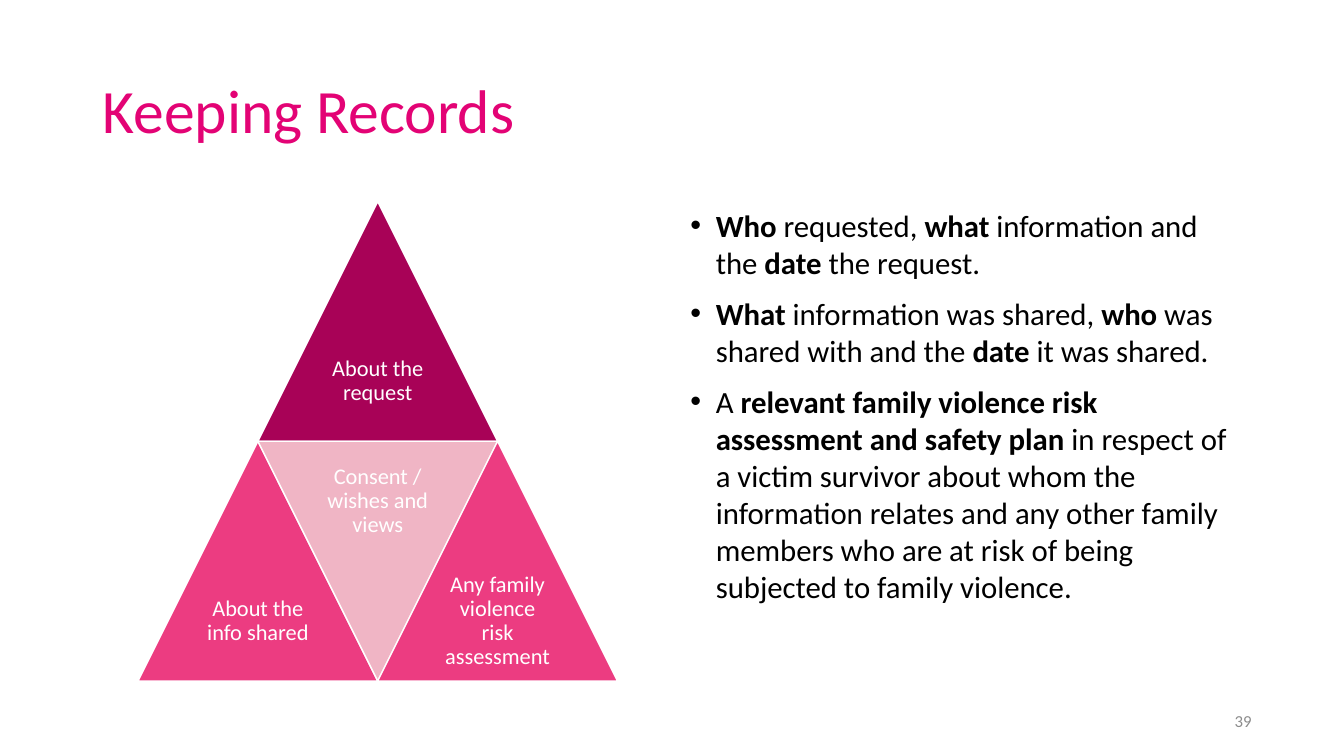
"""Build the "Keeping Records" slide with a four-part triangle and a bullet list."""
from dataclasses import dataclass

import pptx
import pptx.dml.color
import pptx.enum.shapes
import pptx.enum.text
import pptx.oxml
import pptx.oxml.ns
import pptx.util

Cm = pptx.util.Cm
Pt = pptx.util.Pt
ALIGN = pptx.enum.text.PP_ALIGN
ANCHOR = pptx.enum.text.MSO_ANCHOR

FONT = "Calibri"
SIDE = 6.04
PYRAMID_LEFT = 3.48
PYRAMID_TOP = 5.08


@dataclass
class Part:
    label: str
    column: float
    row: int
    fill: str
    inverted: bool = False


PARTS = [
    Part("About the request", 0.5, 0, "A80257"),
    Part("About the info shared", 0, 1, "EC3C81"),
    Part("Consent / wishes and views", 0.5, 1, "F0B5C5", True),
    Part("Any family violence risk assessment", 1, 1, "EC3C81"),
]

BULLETS = [
    [("Who", True), (" requested, ", False), ("what", True),
     (" information and the ", False), ("date", True), (" the request.", False)],
    [("What", True), (" information was shared, ", False), ("who", True),
     (" was shared with and the ", False), ("date", True), (" it was shared.", False)],
    [("A ", False),
     ("relevant family violence risk assessment and safety plan", True),
     (" in respect of a victim survivor about whom the information relates and any "
      "other family members who are at risk of being subjected to family violence.", False)],
]


def rgb(value: str) -> pptx.dml.color.RGBColor:
    return pptx.dml.color.RGBColor.from_string(value)


def add_run(p, text: str, size: float, color: str, bold: bool = False) -> None:
    r = p.add_run()
    r.text = text
    r.font.name = FONT
    r.font.size = Pt(size)
    r.font.bold = bold
    r.font.color.rgb = rgb(color)


def place(sp, left: float, top: float, width: float, height: float) -> None:
    sp.left, sp.top, sp.width, sp.height = Cm(left), Cm(top), Cm(width), Cm(height)


def add_box(shapes, left: float, top: float, width: float, height: float,
            inset_x: float, inset_y: float, anchor):
    sp = shapes.add_textbox(Cm(left), Cm(top), Cm(width), Cm(height))
    tf = sp.text_frame
    tf.word_wrap = True
    tf.vertical_anchor = anchor
    tf.margin_left = tf.margin_right = Cm(inset_x)
    tf.margin_top = tf.margin_bottom = Cm(inset_y)
    return tf


def add_part(shapes, part: Part) -> None:
    left = PYRAMID_LEFT + part.column * SIDE
    top = PYRAMID_TOP + part.row * SIDE
    sp = shapes.add_shape(pptx.enum.shapes.MSO_SHAPE.ISOSCELES_TRIANGLE,
                          Cm(left), Cm(top), Cm(SIDE), Cm(SIDE))
    sp.shadow.inherit = False
    sp.rotation = 180 if part.inverted else 0
    sp.fill.solid()
    sp.fill.fore_color.rgb = rgb(part.fill)
    sp.line.color.rgb = rgb("FFFFFF")
    sp.line.width = Pt(1)

    label_top = top if part.inverted else top + SIDE / 2
    tf = add_box(shapes, left + SIDE / 4, label_top, SIDE / 2, SIDE / 2,
                 0.17, 0.17, ANCHOR.MIDDLE)
    p = tf.paragraphs[0]
    p.alignment = ALIGN.CENTER
    p.line_spacing = 0.9
    add_run(p, part.label, 16, "FFFFFF")


def add_bullets(shapes) -> None:
    tf = add_box(shapes, 17.15, 5.08, 14.4, 12.09, 0.25, 0.13, ANCHOR.TOP)
    for i, runs in enumerate(BULLETS):
        p = tf.add_paragraph() if i else tf.paragraphs[0]
        pPr = p._p.get_or_add_pPr()
        pPr.set("marL", str(Cm(0.64)))
        pPr.set("indent", str(-Cm(0.64)))
        for tag, key, value in (("a:buFont", "typeface", "Arial"), ("a:buChar", "char", "•")):
            bullet = pptx.oxml.parse_xml(f"<{tag} {pptx.oxml.ns.nsdecls('a')}/>")
            bullet.set(key, value)
            pPr.append(bullet)
        if i:
            p.space_before = Pt(10)
        for text, bold in runs:
            add_run(p, text, 22, "000000", bold)


def main() -> None:
    prs = pptx.Presentation()
    prs.slide_width, prs.slide_height = Cm(33.87), Cm(19.05)
    s = prs.slides.add_slide(prs.slide_layouts[5])

    title = s.shapes.title
    place(title, 2.33, 1.01, 29.21, 3.68)
    title.text_frame.vertical_anchor = ANCHOR.MIDDLE
    p = title.text_frame.paragraphs[0]
    p.alignment = ALIGN.LEFT
    p.line_spacing = 0.9
    add_run(p, "Keeping Records", 44, "E30375")

    pyramid = s.shapes.add_group_shape()
    for part in PARTS:
        add_part(pyramid.shapes, part)

    add_bullets(s.shapes)

    tf = add_box(s.shapes, 23.92, 17.66, 7.62, 1.01, 0, 0.13, ANCHOR.MIDDLE)
    p = tf.paragraphs[0]
    p.alignment = ALIGN.RIGHT
    add_run(p, "39", 12, "8C8C8C")

    prs.save("out.pptx")


if __name__ == "__main__":
    main()
